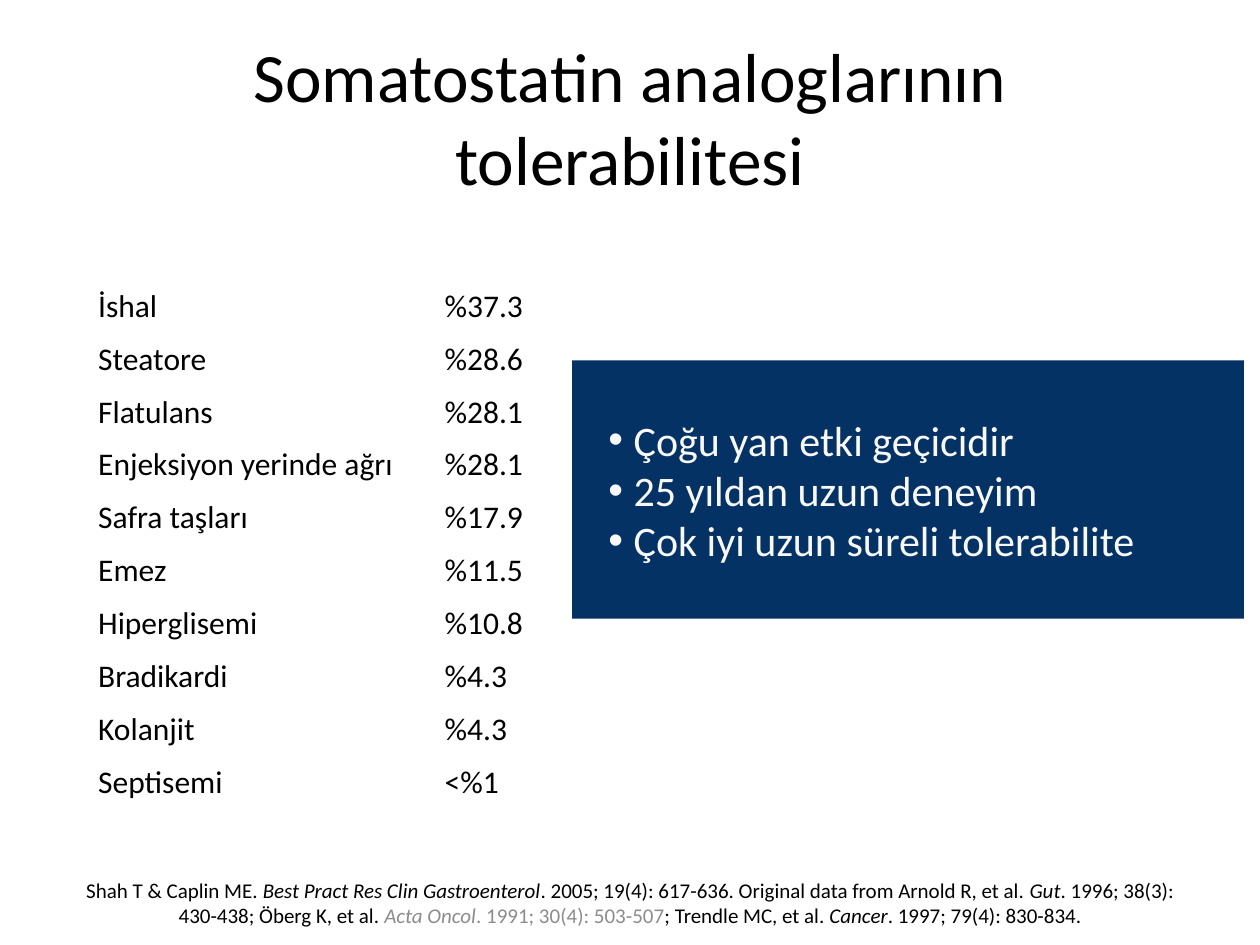
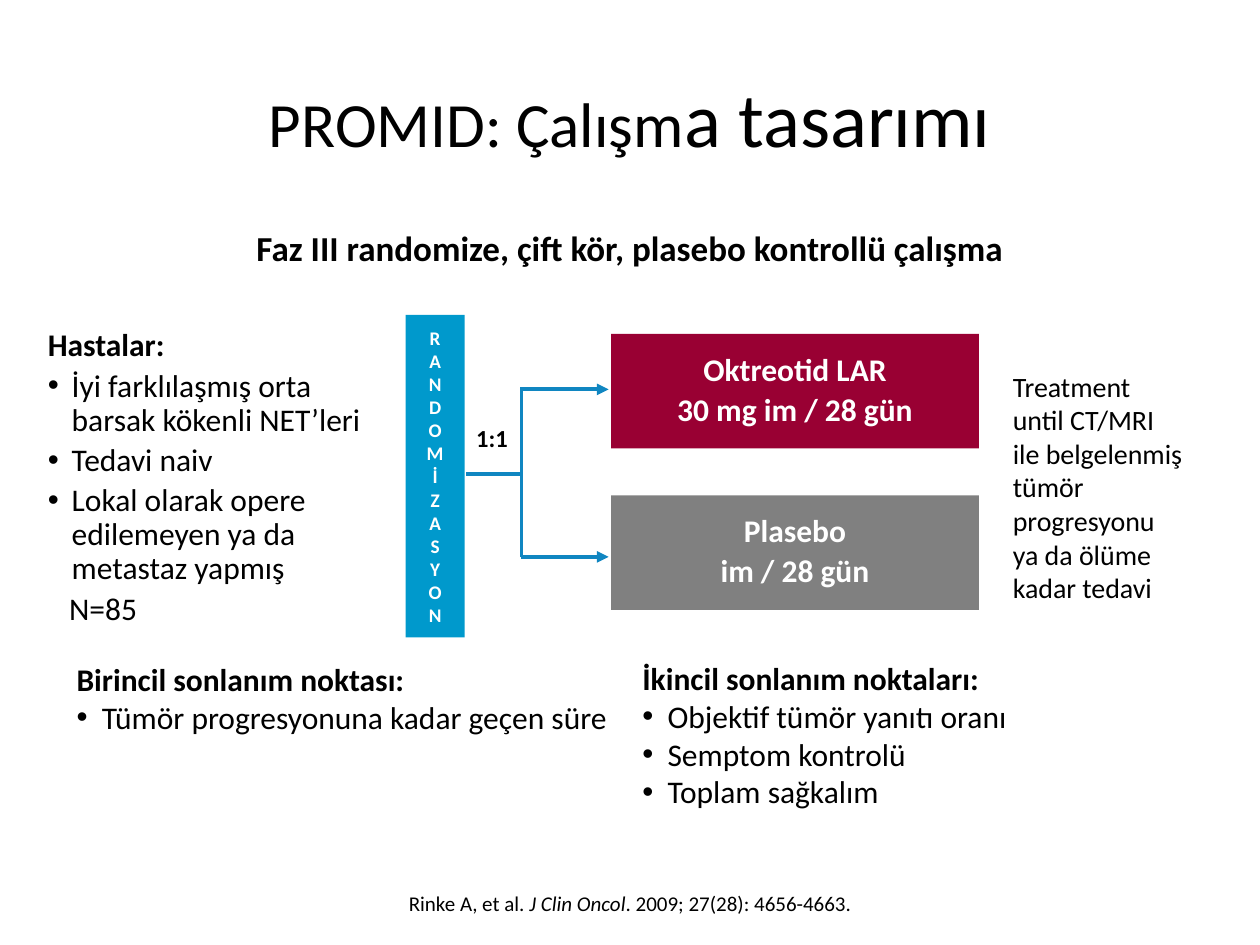
from dataclasses import dataclass

from lxml import etree
from pptx import Presentation
from pptx.dml.color import RGBColor
from pptx.enum.shapes import MSO_CONNECTOR, MSO_SHAPE
from pptx.enum.text import MSO_ANCHOR, MSO_AUTO_SIZE, PP_ALIGN
from pptx.oxml.ns import qn
from pptx.util import Pt

RECT, STRAIGHT = MSO_SHAPE.RECTANGLE, MSO_CONNECTOR.STRAIGHT
LEFT, CENTER = PP_ALIGN.LEFT, PP_ALIGN.CENTER
TOP, MIDDLE = MSO_ANCHOR.TOP, MSO_ANCHOR.MIDDLE
TITLE_ONLY = 5


@dataclass(frozen=True)
class Theme:
    font: str = "Calibri"
    black: str = "000000"
    white: str = "FFFFFF"
    off_white: str = "F8F8F8"
    muted: str = "8C8C8C"
    navy: str = "043265"
    crimson: str = "990033"
    gray: str = "808080"
    cyan: str = "0099CC"
    line: str = "1086C1"
    title: float = 39.6
    title_small: float = 36
    title_large: float = 44
    callout: float = 24
    subtitle: float = 20
    body: float = 18
    note: float = 16
    label: float = 14
    source: float = 12
    letters: float = 11


T = Theme()

SIDE_EFFECTS = [
    ("İshal", "%37.3"),
    ("Steatore", "%28.6"),
    ("Flatulans", "%28.1"),
    ("Enjeksiyon yerinde ağrı", "%28.1"),
    ("Safra taşları", "%17.9"),
    ("Emez", "%11.5"),
    ("Hiperglisemi", "%10.8"),
    ("Bradikardi", "%4.3"),
    ("Kolanjit", "%4.3"),
    ("Septisemi", "<%1"),
]
TOLERABILITY_SOURCE = [
    ("Shah T & Caplin ME. ", False, T.black),
    ("Best Pract Res Clin Gastroenterol", True, T.black),
    (". 2005; 19(4): 617-636. Original data from Arnold R, et al. ", False, T.black),
    ("Gut", True, T.black),
    (". 1996; 38(3): 430-438; Öberg K, et al. ", False, T.black),
    ("Acta Oncol", True, T.muted),
    (". 1991; 30(4): 503-507", False, T.muted),
    ("; Trendle MC, et al. ", False, T.black),
    ("Cancer", True, T.black),
    (". 1997; 79(4): 830-834.", False, T.black),
]
PROMID_SOURCE = [
    ("Rinke A, et al. ", False, T.black),
    ("J Clin Oncol", True, T.black),
    (". 2009; 27(28): 4656-4663.", False, T.black),
]


def rgb(color):
    return RGBColor.from_string(color)


def style_run(r, size, color=T.black, bold=False, italic=False):
    f = r.font
    f.name, f.size, f.bold, f.italic = T.font, Pt(size), bold, italic
    f.color.rgb = rgb(color)


def write(tf, lines, size=T.body, color=T.black, bold=False, align=LEFT,
          anchor=TOP, spacing=None, before=0):
    """Put one paragraph per line into tf; before is the gap between them."""
    tf.vertical_anchor = anchor
    for i, line in enumerate(lines):
        p = tf.paragraphs[0] if i == 0 else tf.add_paragraph()
        p.text = line
        p.alignment = align
        if spacing:
            p.line_spacing = spacing
        if i and before:
            p.space_before = Pt(before)
        for r in p.runs:
            style_run(r, size, color, bold)
    return tf


def indent(p, left, first=0):
    pPr = p._p.get_or_add_pPr()
    pPr.set("marL", str(Pt(left)))
    pPr.set("indent", str(Pt(first)))
    return pPr


def add_bullet(p, left, hang):
    pPr = indent(p, left, -hang)
    etree.SubElement(pPr, qn("a:buFont")).set("typeface", "Arial")
    etree.SubElement(pPr, qn("a:buChar")).set("char", "•")


def add_tab(p, pos):
    tabs = etree.SubElement(p._p.get_or_add_pPr(), qn("a:tabLst"))
    tab = etree.SubElement(tabs, qn("a:tab"))
    tab.set("pos", str(Pt(pos)))
    tab.set("algn", "l")


def add_text(s, box, wrap=True):
    tf = s.shapes.add_textbox(*map(Pt, box)).text_frame
    tf.word_wrap = wrap
    return tf


def add_block(s, box, fill):
    sp = s.shapes.add_shape(RECT, *map(Pt, box))
    sp.shadow.inherit = False
    sp.fill.solid()
    sp.fill.fore_color.rgb = rgb(fill)
    sp.line.fill.background()
    return sp.text_frame


def add_line(s, x1, y1, x2, y2, arrow=False):
    c = s.shapes.add_connector(STRAIGHT, Pt(x1), Pt(y1), Pt(x2), Pt(y2))
    c.line.color.rgb = rgb(T.line)
    c.line.width = Pt(2.25)
    if arrow:
        ln = c.line._get_or_add_ln()
        etree.SubElement(ln, qn("a:tailEnd")).set("type", "triangle")
    etree.SubElement(c._element.spPr, qn("a:effectLst"))


def add_headed_list(s, box, heading, items, hang=14.4, **style):
    """Bold heading over bulleted items."""
    tf = write(add_text(s, box), [heading, *items], **style)
    for r in tf.paragraphs[0].runs:
        r.font.bold = True
    for p in tf.paragraphs[1:]:
        add_bullet(p, hang, hang)
    return tf


def add_slide(prs, title_runs, source):
    """Slide with its title, given as (text, size) runs, and source line."""
    s = prs.slides.add_slide(prs.slide_layouts[TITLE_ONLY])
    sp = s.shapes.title
    sp.left, sp.top, sp.width, sp.height = map(Pt, (36, 21.6, 648, 90))
    tf = sp.text_frame
    tf.auto_size = MSO_AUTO_SIZE.NONE
    tf.vertical_anchor = MIDDLE
    p = tf.paragraphs[0]
    p.alignment = CENTER
    for text, size in title_runs:
        r = p.add_run()
        r.text = text
        style_run(r, size)

    tf = add_text(s, (36.7, 502.6, 646.6, 26.6))
    tf.vertical_anchor = MIDDLE
    p = tf.paragraphs[0]
    p.alignment = CENTER
    for text, italic, color in source:
        r = p.add_run()
        r.text = text
        style_run(r, T.source, color, italic=italic)
    return s


def build_tolerability(prs):
    s = add_slide(prs, [("Somatostatin analoglarının tolerabilitesi", T.title)],
                  TOLERABILITY_SOURCE)
    tf = write(add_block(s, (49, 151.2, 373, 312.5), T.white),
               ["\t".join(row) for row in SIDE_EFFECTS], spacing=1.4)
    for p in tf.paragraphs:
        add_tab(p, 198)

    tf = write(add_block(s, (327, 206, 383.8, 147.6), T.navy),
               ["Çoğu yan etki geçicidir", "25 yıldan uzun deneyim",
                "Çok iyi uzun süreli tolerabilite"],
               size=T.callout, color=T.off_white, anchor=MIDDLE)
    for p in tf.paragraphs:
        add_bullet(p, 28, 14.4)


def add_trial_diagram(s):
    tf = add_block(s, (231.8, 180, 33.8, 184.3), T.cyan)
    tf.margin_top = tf.margin_bottom = 0
    write(tf, "RANDOMİZASYON", size=T.letters, color=T.white, bold=True,
          align=CENTER, anchor=MIDDLE)

    trunk, arm_ys = 298, (222.5, 318.2)
    arms = [
        (190.8, T.crimson, ["Oktreotid LAR", "30 mg im / 28 gün"]),
        (283, T.gray, ["Plasebo", "im / 28 gün"]),
    ]
    for y, (top, fill, lines) in zip(arm_ys, arms):
        write(add_block(s, (349.2, top, 210.2, 65.5), fill), lines,
              color=T.white, bold=True, align=CENTER, anchor=MIDDLE,
              spacing=0.9, before=3.6)
        add_line(s, trunk, y, 347.8, y, arrow=True)
    add_line(s, trunk, arm_ys[0] - 1.2, trunk, arm_ys[1])
    add_line(s, 266.4, 270.7, trunk, 270.7)
    write(add_text(s, (265, 238.3, 33, 24.5), wrap=False), ["1:1"],
          size=T.label, bold=True)


def build_promid(prs):
    s = add_slide(prs, [("PROMID: Çalışm", T.title_small),
                        ("a tasarımı", T.title_large)], PROMID_SOURCE)
    write(add_text(s, (36, 126, 648, 32)),
          ["Faz III randomize, çift kör, plasebo kontrollü çalışma"],
          size=T.subtitle, bold=True, align=CENTER)
    add_headed_list(s, (36.7, 373.7, 360, 51), "Birincil sonlanım noktası:",
                    ["Tümör progresyonuna kadar geçen süre"])
    add_headed_list(s, (360, 373, 288, 94.3), "İkincil sonlanım noktaları:",
                    ["Objektif tümör yanıtı oranı", "Semptom kontrolü",
                     "Toplam sağkalım"])

    tf = add_headed_list(s, (20.2, 186.5, 209.5, 173.5), "Hastalar:",
                         ["İyi farklılaşmış orta barsak kökenli NET’leri",
                          "Tedavi naiv",
                          "Lokal olarak opere edilemeyen ya da metastaz yapmış"],
                         hang=13.7, anchor=MIDDLE, spacing=0.9, before=3.6)
    p = tf.add_paragraph()
    p.text = "N=85"
    p.line_spacing, p.space_before = 0.9, Pt(3.6)
    indent(p, 12.2)
    style_run(p.runs[0], T.body)

    add_trial_diagram(s)
    write(add_text(s, (571.7, 207.4, 112.3, 143.3)),
          ["Treatment", "until CT/MRI ile belgelenmiş tümör progresyonu "
           "ya da ölüme kadar tedavi"], size=T.note)


def main():
    prs = Presentation()
    prs.slide_width, prs.slide_height = Pt(720), Pt(540)
    build_tolerability(prs)
    build_promid(prs)
    prs.save("out.pptx")


if __name__ == "__main__":
    main()
